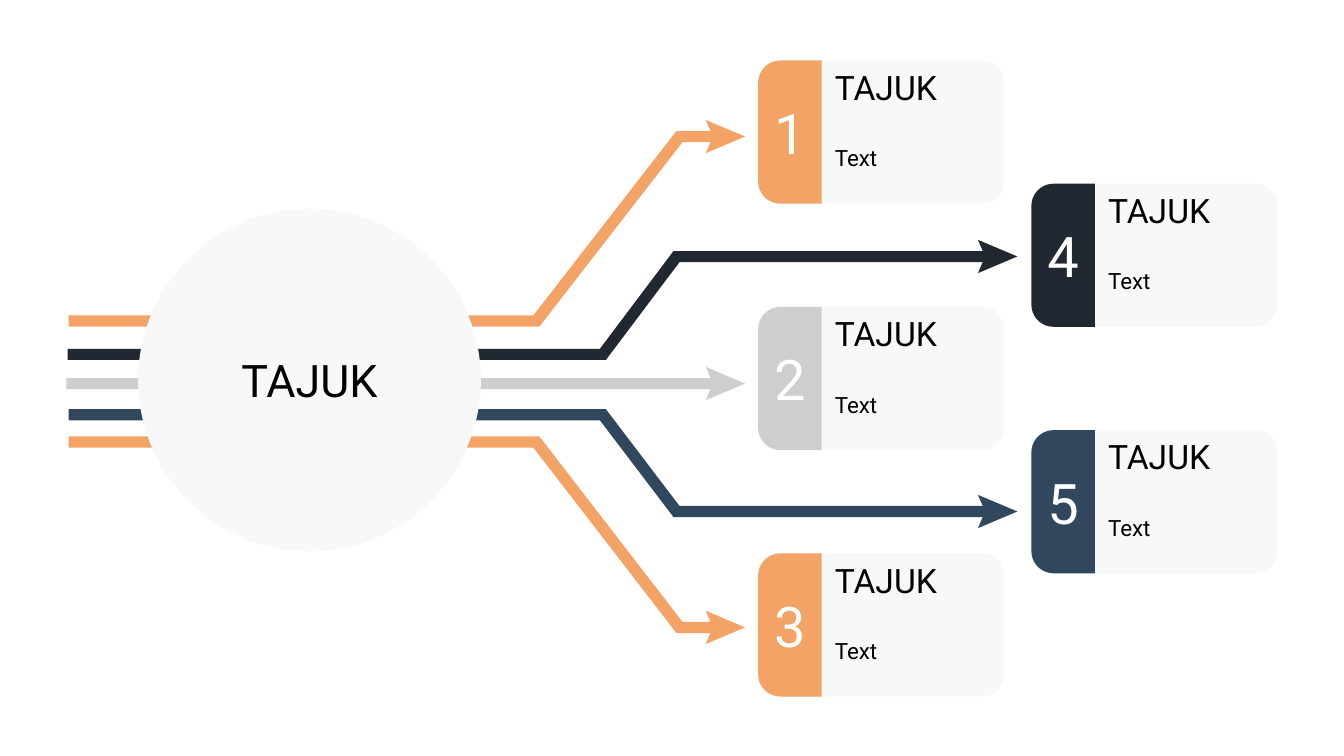
from dataclasses import dataclass
from math import cos, radians, sin

from pptx import Presentation
from pptx.dml.color import RGBColor
from pptx.enum import shapes, text
from pptx.util import Inches, Pt


@dataclass(frozen=True)
class Theme:
    orange: str = "F2A365"
    navy: str = "222831"
    grey: str = "CECECE"
    blue: str = "30475E"
    panel: str = "F7F9F9"
    black: str = "000000"
    white: str = "FFFFFF"
    font: str = "Roboto"
    hub_size: int = 32
    number_size: int = 40
    heading_size: int = 24
    body_size: int = 16


@dataclass(frozen=True)
class Flow:
    """A bent arrow; start_y and end_y are the top edges of its two level parts."""
    left: float
    start_y: float
    bends: tuple[float, float]
    end_y: float
    tip: float
    color: str


@dataclass(frozen=True)
class Card:
    number: int
    column: int
    row: int
    color: str
    heading: str = "TAJUK"
    body: str = "Text"


THEME = Theme()
BAND, BEND_SHIFT = 0.11, 0.03
HEAD_W, HEAD_H, HEAD_NOTCH, HEAD_OVERLAP = 0.39, 0.33, 0.07, 0.12
CARD_W, CARD_H, TAB_W, RADIUS = 2.44, 1.42, 0.63, 0.22
CARD_LEFT, CARD_TOP, COLUMN_STEP, ROW_STEP = 7.52, 0.6, 2.71, 1.2225

OUTER_BENDS, INNER_BENDS = (5.32, 6.74), (5.98, 6.71)
FLOWS = [
    Flow(0.66, 3.75, OUTER_BENDS, 3.75, 7.39, THEME.grey),
    Flow(0.68, 3.13, OUTER_BENDS, 1.3, 7.39, THEME.orange),
    Flow(0.67, 3.46, INNER_BENDS, 2.49, 10.09, THEME.navy),
    Flow(0.68, 4.06, INNER_BENDS, 5.02, 10.09, THEME.blue),
    Flow(0.68, 4.33, OUTER_BENDS, 6.17, 7.39, THEME.orange),
]
CARDS = [
    Card(1, 0, 0, THEME.orange),
    Card(2, 0, 2, THEME.grey),
    Card(3, 0, 4, THEME.orange),
    Card(4, 1, 1, THEME.navy),
    Card(5, 1, 3, THEME.blue),
]


def paint(sp, color: str) -> None:
    sp.shadow.inherit = False
    sp.fill.solid()
    sp.fill.fore_color.rgb = RGBColor.from_string(color)
    sp.line.fill.background()


def write(sp, words: str, size: int, color: str, align=text.PP_ALIGN.CENTER) -> None:
    tf = sp.text_frame
    tf.word_wrap = True
    tf.vertical_anchor = text.MSO_ANCHOR.MIDDLE
    tf.margin_left = tf.margin_right = tf.margin_top = tf.margin_bottom = Inches(0.13)
    tf.text = words
    p = tf.paragraphs[0]
    p.alignment = align
    font = p.runs[0].font
    font.name = THEME.font
    font.size = Pt(size)
    font.color.rgb = RGBColor.from_string(color)


def add_polygon(slide, points: list[tuple[float, float]], color: str):
    start, *rest = [(Inches(x), Inches(y)) for x, y in points]
    builder = slide.shapes.build_freeform(*start)
    builder.add_line_segments(rest, close=True)
    sp = builder.convert_to_shape()
    paint(sp, color)
    return sp


def add_flow(slide, flow: Flow) -> None:
    direction = (flow.end_y > flow.start_y) - (flow.end_y < flow.start_y)
    band_end = flow.tip - HEAD_W + HEAD_OVERLAP

    def edge(drop: float, shift: float) -> list[tuple[float, float]]:
        first, second = flow.bends
        return [(flow.left, flow.start_y + drop), (first + shift, flow.start_y + drop),
                (second + shift, flow.end_y + drop), (band_end, flow.end_y + drop)]

    shift = direction * BEND_SHIFT
    add_polygon(slide, edge(0, shift) + edge(BAND, -shift)[::-1], flow.color)

    back, middle = flow.tip - HEAD_W, flow.end_y + BAND / 2
    add_polygon(slide, [(back, middle - HEAD_H / 2), (back + HEAD_NOTCH, middle),
                        (back, middle + HEAD_H / 2), (flow.tip, middle)], flow.color)


def add_hub(slide) -> None:
    sp = slide.shapes.add_shape(shapes.MSO_SHAPE.OVAL, Inches(1.37), Inches(2.07),
                                Inches(3.4), Inches(3.4))
    paint(sp, THEME.panel)
    write(sp, "TAJUK", THEME.hub_size, THEME.black)


def tab_outline(left: float, top: float) -> list[tuple[float, float]]:
    """Rectangle whose two left corners are rounded."""
    def corner(center_y: float, angles: range) -> list[tuple[float, float]]:
        return [(left + RADIUS + RADIUS * cos(radians(a)),
                 center_y + RADIUS * sin(radians(a))) for a in angles]

    right, bottom = left + TAB_W, top + CARD_H
    return (corner(top + RADIUS, range(270, 179, -10))
            + corner(bottom - RADIUS, range(180, 89, -10))
            + [(right, bottom), (right, top)])


def add_card(slide, card: Card) -> None:
    left = CARD_LEFT + card.column * COLUMN_STEP
    top = CARD_TOP + card.row * ROW_STEP
    panel = slide.shapes.add_shape(shapes.MSO_SHAPE.ROUNDED_RECTANGLE, Inches(left),
                                   Inches(top), Inches(CARD_W), Inches(CARD_H))
    panel.adjustments[0] = RADIUS / CARD_H
    paint(panel, THEME.panel)
    tab = add_polygon(slide, tab_outline(left, top), card.color)
    write(tab, str(card.number), THEME.number_size, THEME.white)
    for words, offset, height, size in (
        (card.heading, 0, 0.52, THEME.heading_size),
        (card.body, 0.53, 0.87, THEME.body_size),
    ):
        box = slide.shapes.add_textbox(Inches(left + TAB_W), Inches(top + offset),
                                       Inches(CARD_W - TAB_W), Inches(height))
        write(box, words, size, THEME.black, text.PP_ALIGN.LEFT)


def main() -> None:
    prs = Presentation()
    prs.slide_width, prs.slide_height = Inches(13.33), Inches(7.5)
    slide = prs.slides.add_slide(prs.slide_layouts.get_by_name("Blank"))
    for flow in FLOWS:
        add_flow(slide, flow)
    add_hub(slide)
    for card in CARDS:
        add_card(slide, card)
    prs.save("out.pptx")


if __name__ == "__main__":
    main()
